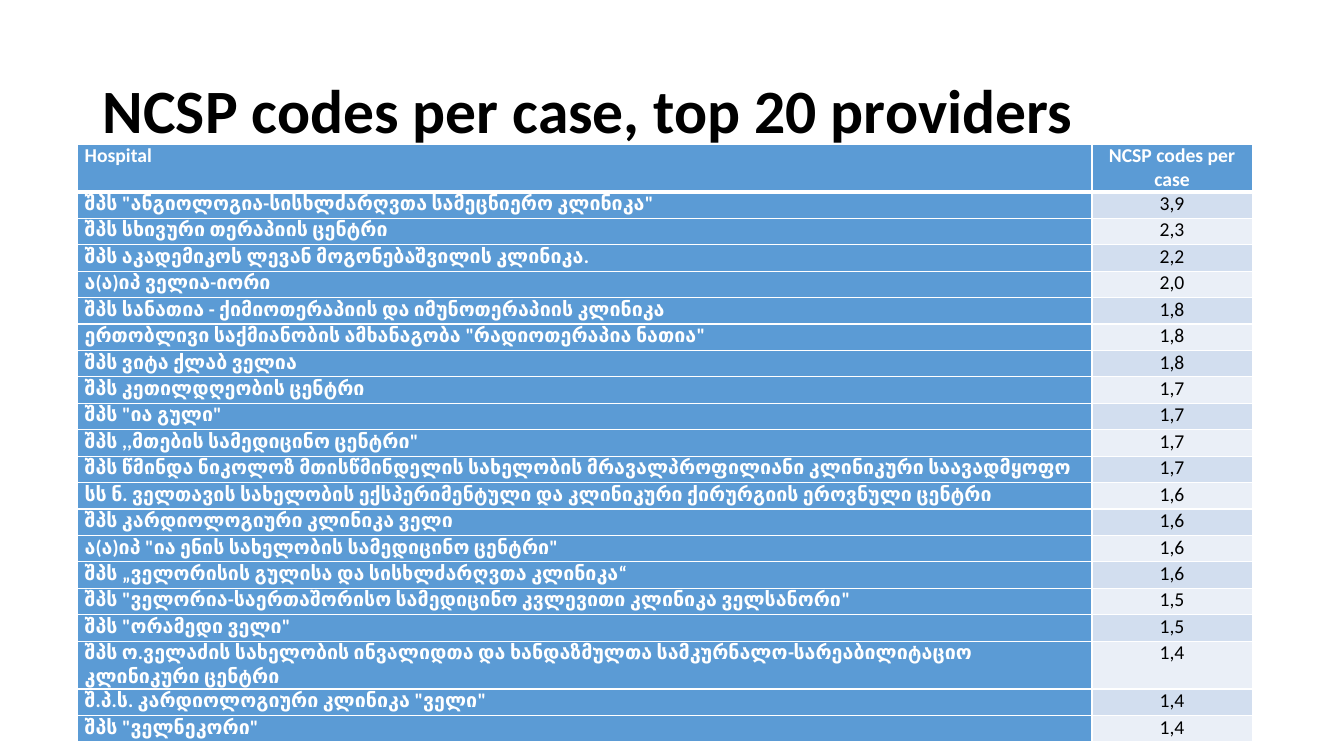
import dataclasses

import lxml.etree
import pptx
import pptx.dml.color
import pptx.enum.text
import pptx.oxml.ns
import pptx.util

Inches = pptx.util.Inches
Pt = pptx.util.Pt
RGBColor = pptx.dml.color.RGBColor
Align = pptx.enum.text.PP_ALIGN
qn = pptx.oxml.ns.qn

BLACK = RGBColor(0x00, 0x00, 0x00)
WHITE = RGBColor(0xFF, 0xFF, 0xFF)
BLUE = RGBColor(0x5B, 0x9B, 0xD5)
LIGHT = RGBColor(0xD2, 0xDE, 0xEF)
PALE = RGBColor(0xEA, 0xEF, 0xF7)

FONT = "Calibri"
WIDTHS = (10.06, 1.59)
HEIGHT = 5.51


@dataclasses.dataclass
class Clinic:
    name: str
    codes: str


HEAD = Clinic("Hospital", "NCSP codes per case")
CLINICS = [
    Clinic('შპს "ანგიოლოგია-სისხლძარღვთა სამეცნიერო კლინიკა"', "3,9"),
    Clinic("შპს სხივური თერაპიის ცენტრი", "2,3"),
    Clinic("შპს აკადემიკოს ლევან მოგონებაშვილის კლინიკა.", "2,2"),
    Clinic("ა(ა)იპ ველია-იორი", "2,0"),
    Clinic("შპს სანათია - ქიმიოთერაპიის და იმუნოთერაპიის კლინიკა", "1,8"),
    Clinic('ერთობლივი საქმიანობის ამხანაგობა "რადიოთერაპია ნათია"', "1,8"),
    Clinic("შპს ვიტა ქლაბ ველია", "1,8"),
    Clinic("შპს კეთილდღეობის ცენტრი", "1,7"),
    Clinic('შპს "ია გული"', "1,7"),
    Clinic('შპს ,,მთების სამედიცინო ცენტრი"', "1,7"),
    Clinic("შპს წმინდა ნიკოლოზ მთისწმინდელის სახელობის მრავალპროფილიანი "
           "კლინიკური საავადმყოფო", "1,7"),
    Clinic("სს ნ. ველთავის სახელობის ექსპერიმენტული და კლინიკური "
           "ქირურგიის ეროვნული ცენტრი", "1,6"),
    Clinic("შპს კარდიოლოგიური კლინიკა ველი", "1,6"),
    Clinic('ა(ა)იპ "ია ენის სახელობის სამედიცინო ცენტრი"', "1,6"),
    Clinic("შპს „ველორისის გულისა და სისხლძარღვთა კლინიკა“", "1,6"),
    Clinic('შპს "ველორია-საერთაშორისო სამედიცინო კვლევითი კლინიკა '
           'ველსანორი"', "1,5"),
    Clinic('შპს "ორამედი ველი"', "1,5"),
    Clinic("შპს ო.ველაძის სახელობის ინვალიდთა და ხანდაზმულთა "
           "სამკურნალო-სარეაბილიტაციო კლინიკური ცენტრი", "1,4"),
    Clinic('შ.პ.ს. კარდიოლოგიური კლინიკა "ველი"', "1,4"),
    Clinic('შპს "ველნეკორი"', "1,4"),
]


def style(par, size: float, color: RGBColor, bold: bool, align) -> None:
    par.alignment = align
    for run in par.runs:
        font = run.font
        font.name = FONT
        font.size = Pt(size)
        font.bold = bold
        font.color.rgb = color


def edge(cell, side: str, width: float) -> None:
    props = cell._tc.get_or_add_tcPr()
    line = lxml.etree.SubElement(props, qn("a:" + side), w=str(Pt(width)))
    fill = lxml.etree.SubElement(line, qn("a:solidFill"))
    lxml.etree.SubElement(fill, qn("a:srgbClr"), val=str(WHITE))


def paint(cell, text: str, fill: RGBColor, color: RGBColor, bold: bool,
          align, top: float, base: float) -> None:
    cell.margin_left = cell.margin_right = Inches(0.07)
    cell.margin_top = cell.margin_bottom = 0
    # Borders precede the fill in the cell properties
    for side, width in (("lnL", 1), ("lnR", 1), ("lnT", top), ("lnB", base)):
        edge(cell, side, width)
    cell.fill.solid()
    cell.fill.fore_color.rgb = fill
    cell.text_frame.text = text
    style(cell.text_frame.paragraphs[0], 14, color, bold, align)


def add_title(slide) -> None:
    title = slide.shapes.title
    title.left, title.top = Inches(0.92), Inches(0.4)
    title.width, title.height = Inches(11.5), Inches(1.45)
    frame = title.text_frame
    frame.text = "NCSP codes per case, top 20 providers"
    frame.vertical_anchor = pptx.enum.text.MSO_ANCHOR.MIDDLE
    par = frame.paragraphs[0]
    par.line_spacing = 0.9
    style(par, 44, BLACK, True, Align.LEFT)


def add_codes(slide) -> None:
    rows = [HEAD, *CLINICS]
    # The new table shares its height equally among the rows
    frame = slide.shapes.add_table(
        len(rows), len(WIDTHS), Inches(0.77), Inches(1.43),
        Inches(sum(WIDTHS)), Inches(HEIGHT))
    table = frame.table
    table.first_col = True
    for col, width in zip(table.columns, WIDTHS):
        col.width = Inches(width)
    for i, item in enumerate(rows):
        head = i == 0
        top = 3 if i == 1 else 1
        base = 3 if head else 1
        band = BLUE if head else LIGHT if i % 2 else PALE
        paint(table.cell(i, 0), item.name, BLUE, WHITE, True,
              Align.LEFT, top, base)
        paint(table.cell(i, 1), item.codes, band, WHITE if head else BLACK,
              head, Align.CENTER, top, base)


def main() -> None:
    deck = pptx.Presentation()
    deck.slide_width, deck.slide_height = Inches(13.33), Inches(7.5)
    slide = deck.slides.add_slide(deck.slide_layouts[5])
    add_title(slide)
    add_codes(slide)
    deck.save("out.pptx")


if __name__ == "__main__":
    main()
